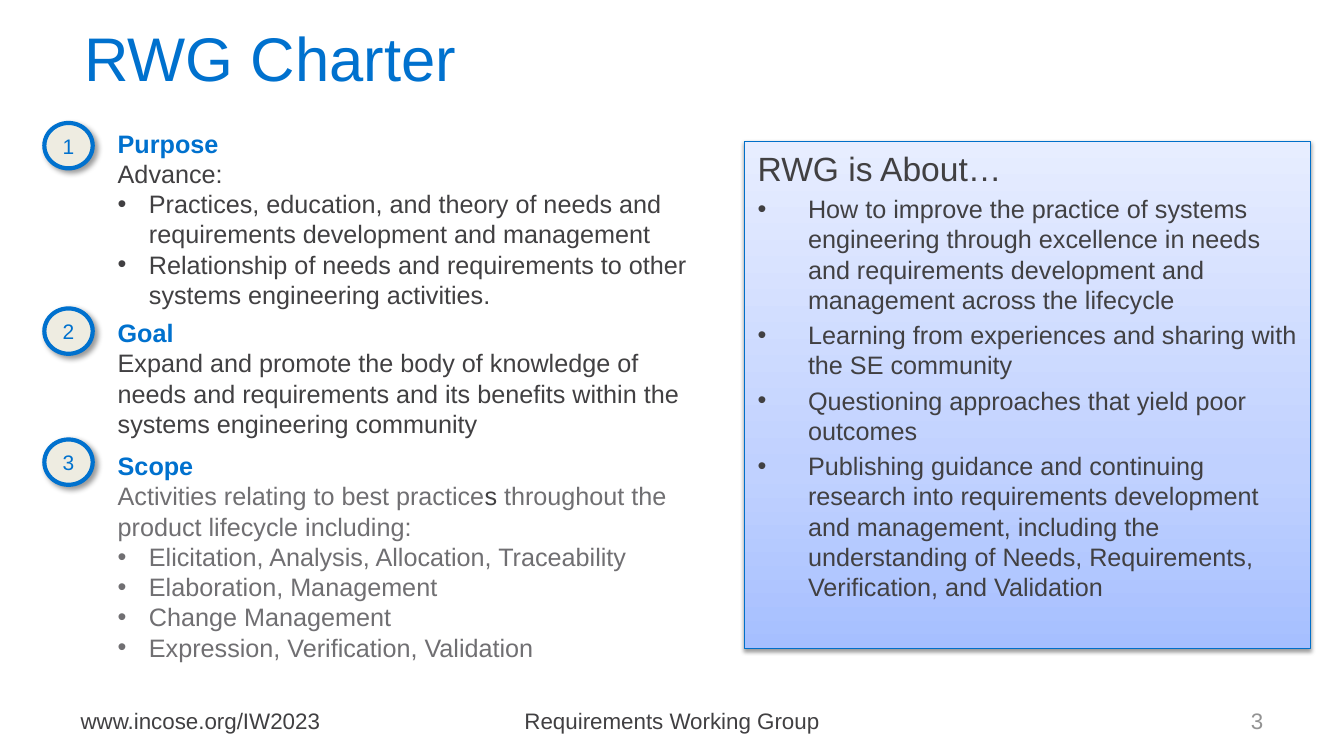
import copy
from lxml import etree
from pptx import Presentation, util as u
from pptx.dml.color import RGBColor
from pptx.enum import shapes, text
from pptx.oxml.ns import qn

PX = 9144
BLUE, DARK, GREY = "0071CE", "414042", "706F72"
MID, TOP = text.MSO_ANCHOR.MIDDLE, text.MSO_ANCHOR.TOP
LEFT, MIDDLE, RIGHT = text.PP_ALIGN.LEFT, text.PP_ALIGN.CENTER, text.PP_ALIGN.RIGHT


def write(box, lines, size, tone, inset=(13, 7), anchor=MID, align=LEFT, indent=0):
    frame = box.text_frame
    frame.text = "\n".join(line.removeprefix("• ") for line in lines)
    frame.word_wrap = True
    frame.auto_size = text.MSO_AUTO_SIZE.NONE
    frame.vertical_anchor = anchor
    frame.margin_left = frame.margin_right = inset[0] * PX
    frame.margin_top = frame.margin_bottom = inset[1] * PX
    for para, line in zip(frame.paragraphs, lines):
        para.alignment = align
        if line.startswith("• "):
            props = para._p.get_or_add_pPr()
            props.set("marL", str(indent * PX))
            props.set("indent", str(-indent * PX))
            etree.SubElement(props, qn("a:buFont"), typeface="Arial")
            etree.SubElement(props, qn("a:buChar"), char="•")
        for run in para.runs:
            run.font.name = "Arial"
            run.font.size = u.Pt(size)
            run.font.color.rgb = RGBColor.from_string(tone)


def shade(shape, alpha, blur, dist, angle):
    effects = etree.SubElement(shape._element.spPr, qn("a:effectLst"))
    outer = etree.SubElement(
        effects, qn("a:outerShdw"), blurRad=str(u.Pt(blur)), dist=str(u.Pt(dist)),
        dir=str(angle * 60000), algn="tl", rotWithShape="0")
    color = etree.SubElement(outer, qn("a:srgbClr"), val="000000")
    etree.SubElement(color, qn("a:alpha"), val=str(alpha * 1000))


deck = Presentation()
deck.slide_width, deck.slide_height = 1334 * PX, 750 * PX
slide = deck.slides.add_slide(deck.slide_layouts[5])
title = slide.shapes.title
title.left, title.top, title.width, title.height = 57 * PX, 15 * PX, 423 * PX, 83 * PX
write(title, ["RWG Charter"], 44, BLUE, align=MIDDLE)

parts = [
    (122, 122, 611, 192, DARK, [
        "Purpose",
        "Advance:",
        "• Practices, education, and theory of needs and requirements development and management",
        "• Relationship of needs and requirements to other systems engineering activities."]),
    (306, 310, 600, 131, DARK, [
        "Goal",
        "Expand and promote the body of knowledge of needs and requirements and its benefits "
        "within the systems engineering community"]),
    (436, 442, 589, 222, GREY, [
        "Scope",
        "Activities relating to best practices throughout the product lifecycle including:",
        "• Elicitation, Analysis, Allocation, Traceability",
        "• Elaboration, Management",
        "• Change Management",
        "• Expression, Verification, Validation"]),
]
for num, (mark, top, wide, high, tone, lines) in enumerate(parts, 1):
    box = slide.shapes.add_textbox(107 * PX, top * PX, wide * PX, high * PX)
    write(box, lines, 18, tone, (10, 5), TOP, indent=31)
    head = box.text_frame.paragraphs[0].runs[0].font
    head.bold = True
    head.color.rgb = RGBColor.from_string(BLUE)

    disc = slide.shapes.add_shape(
        shapes.MSO_SHAPE.OVAL, 44 * PX, mark * PX, 48 * PX, 45 * PX)
    disc.fill.solid()
    disc.fill.fore_color.rgb = RGBColor.from_string("EEECE1")
    disc.line.color.rgb = RGBColor.from_string(BLUE)
    disc.line.width = u.Pt(3)
    shade(disc, 40, 4, 3, 45)
    write(disc, [str(num)], 15, BLUE, (10, 5), align=MIDDLE)

scope = box.text_frame.paragraphs[1]
scope.text = ""
for piece, tone in [("Activities relating to best practice", GREY), ("s ", DARK),
                    ("throughout the product lifecycle including:", GREY)]:
    run = scope.add_run()
    run.text = piece
    run.font.name = "Arial"
    run.font.size = u.Pt(18)
    run.font.color.rgb = RGBColor.from_string(tone)

panel = slide.shapes.add_shape(
    shapes.MSO_SHAPE.RECTANGLE, 739 * PX, 140 * PX, 562 * PX, 503 * PX)
panel.fill.gradient()
panel.fill.gradient_angle = 90
last = panel._element.spPr.find(".//" + qn("a:gs"))
last.addnext(copy.deepcopy(last))
stops = [(0, "A6BFFF"), (0.35, "C0D1FF"), (1, "E7EDFF")]
for stop, (place, tone) in zip(panel.fill.gradient_stops, stops):
    stop.position = place
    stop.color.rgb = RGBColor.from_string(tone)
panel.line.color.rgb = RGBColor.from_string("006FC9")
panel.line.width = u.Pt(0.75)
shade(panel, 38, 3.1, 1.6, 90)
write(panel, [
    "RWG is About…",
    "• How to improve the practice of systems engineering through excellence in needs "
    "and requirements development and management across the lifecycle",
    "• Learning from experiences and sharing with the SE community",
    "• Questioning approaches that yield poor outcomes",
    "• Publishing guidance and continuing research into requirements development and "
    "management, including the understanding of Needs, Requirements, Verification, "
    "and Validation"], 18, DARK, anchor=TOP, indent=50)
about, *points = panel.text_frame.paragraphs
about.runs[0].font.size = u.Pt(24)
for para in points:
    para.space_before = u.Pt(3.6)

for left, wide, label, tone, align in [
        (67, 311, "www.incose.org/IW2023", DARK, LEFT),
        (456, 422, "Requirements Working Group", DARK, MIDDLE),
        (956, 311, "3", "939393", RIGHT)]:
    foot = slide.shapes.add_textbox(left * PX, 695 * PX, wide * PX, 40 * PX)
    write(foot, [label], 16, tone, align=align)

deck.save("out.pptx")
